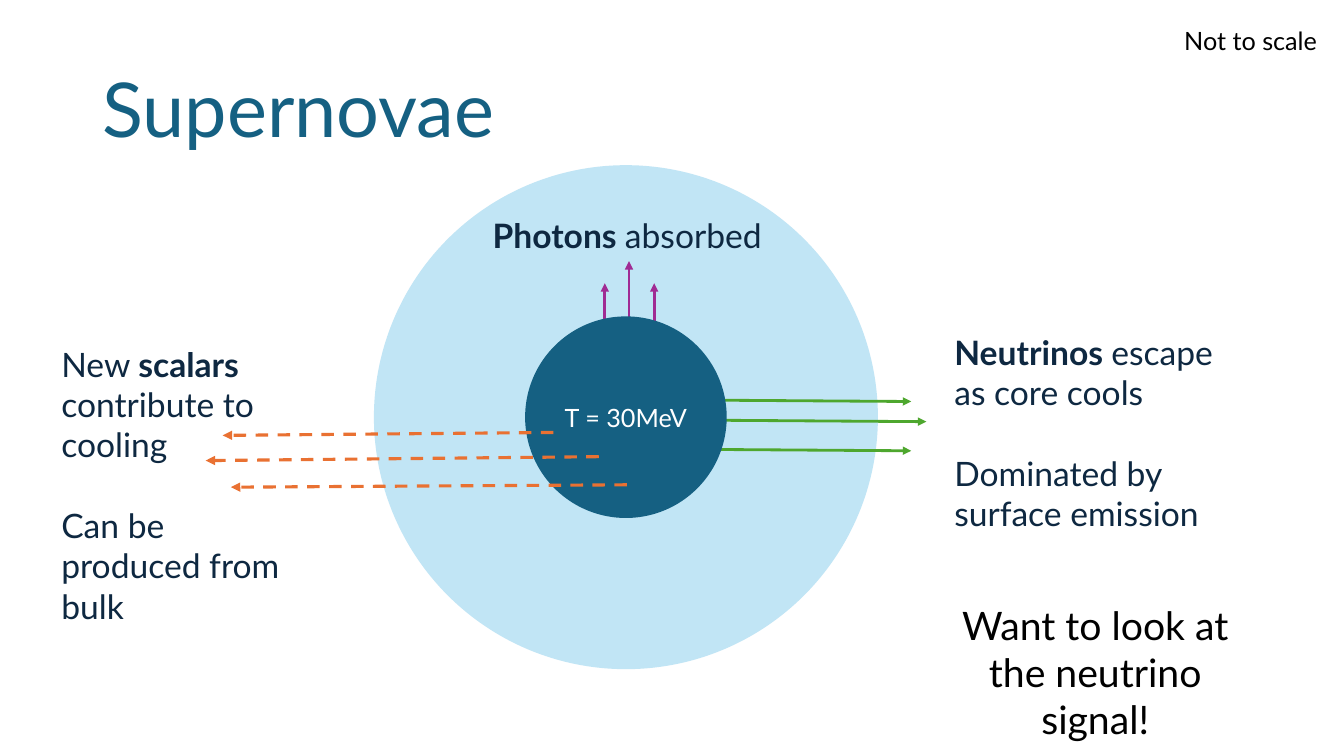
"""Build the slide on particle emission from a supernova core."""
from lxml.etree import SubElement
from pptx import Presentation
from pptx.dml.color import RGBColor
from pptx.enum.dml import MSO_LINE
from pptx.enum.shapes import MSO_CONNECTOR, MSO_SHAPE
from pptx.enum.text import MSO_ANCHOR, MSO_AUTO_SIZE, PP_ALIGN
from pptx.oxml.ns import qn
from pptx.util import Pt

FONT = "Lato"
TEAL, NAVY, BLACK = "156082", "0E2841", "000000"
GREEN, PURPLE, ORANGE = "4EA72E", "A02B93", "E97132"
color = RGBColor.from_string

presentation = Presentation()
presentation.slide_width = Pt(960)
presentation.slide_height = Pt(540)
slide = presentation.slides.add_slide(presentation.slide_layouts[5])


def add_disc(left, top, diameter, fill):
    disc = slide.shapes.add_shape(MSO_SHAPE.OVAL, Pt(left), Pt(top), Pt(diameter), Pt(diameter))
    disc.shadow.inherit = False
    disc.fill.solid()
    disc.fill.fore_color.rgb = color(fill)
    disc.line.fill.background()
    return disc


def add_arrow(ends, stroke, width=2, dash=None):
    arrow = slide.shapes.add_connector(MSO_CONNECTOR.STRAIGHT, *[Pt(value) for value in ends])
    arrow.line.color.rgb = color(stroke)
    arrow.line.width = Pt(width)
    if dash:
        arrow.line.dash_style = dash
    properties = arrow.element.spPr
    SubElement(properties.find(qn("a:ln")), qn("a:tailEnd"), type="triangle")
    SubElement(properties, qn("a:effectLst"))


title = slide.shapes.title
title.left, title.top, title.width, title.height = Pt(66), Pt(28.75), Pt(828), Pt(104.4)
title.text_frame.auto_size = MSO_AUTO_SIZE.NONE
title.text_frame.vertical_anchor = MSO_ANCHOR.MIDDLE
title.text_frame.text = "Supernovae"
paragraph = title.text_frame.paragraphs[0]
paragraph.alignment = PP_ALIGN.LEFT
paragraph.line_spacing = 0.9
paragraph.font.name = FONT
paragraph.font.size = Pt(54)
paragraph.font.color.rgb = color(TEAL)

add_disc(267.1, 118, 360, "C1E5F5")

for x, y in [(503.3, 285.8), (514.1, 300.2), (503.3, 321)]:
    add_arrow((x, y, x + 147.6, y + 1), GREEN)
for x, y in [(432, 245.5), (449.3, 229.7), (467.3, 245.5)]:
    add_arrow((x, y, x, y - 43.2), PURPLE)

core = add_disc(375.1, 226, 144, TEAL)
core.text_frame.word_wrap = True
core.text_frame.vertical_anchor = MSO_ANCHOR.MIDDLE
core.text_frame.text = "T = 30MeV"
paragraph = core.text_frame.paragraphs[0]
paragraph.alignment = PP_ALIGN.CENTER
paragraph.font.name = FONT
paragraph.font.size = Pt(18)
paragraph.font.color.rgb = color("FFFFFF")

for ends in [
    (395.3, 308.9, 159.1, 311),
    (427.7, 326.2, 146.9, 329),
    (447.8, 346.3, 164.9, 348),
]:
    add_arrow(ends, ORANGE, 2.25, MSO_LINE.DASH)

labels = [
    ((344.9, 149.8, 210, 36), 24, NAVY, PP_ALIGN.LEFT,
     [[("Photons ", True), ("absorbed", False)]]),
    ((661, 426.2, 242.6, 75), 28, BLACK, PP_ALIGN.CENTER,
     [[("Want to look at the neutrino signal!", False)]]),
    ((36.7, 241.9, 173.5, 211), 24, NAVY, PP_ALIGN.LEFT,
     [[("New ", False), ("scalars ", True), ("contribute to cooling", False)],
      [("Can be produced from bulk", False)]]),
    ((674.6, 233.3, 219.6, 152.6), 24, NAVY, PP_ALIGN.LEFT,
     [[("Neutrinos ", True), ("escape as core cools", False)],
      [("Dominated by surface emission", False)]]),
    ((838.8, 14.4, 112, 28.8), 18, BLACK, PP_ALIGN.LEFT,
     [[("Not to scale", False)]]),
]
for box, size, ink, alignment, paragraphs in labels:
    label = slide.shapes.add_textbox(*[Pt(value) for value in box])
    frame = label.text_frame
    frame.word_wrap = True
    for index, runs in enumerate(paragraphs):
        paragraph = frame.add_paragraph() if index else frame.paragraphs[0]
        paragraph.alignment = alignment
        paragraph.space_before = Pt(28.8 * index)
        paragraph.font.name = FONT
        paragraph.font.size = Pt(size)
        paragraph.font.color.rgb = color(ink)
        for text, bold in runs:
            run = paragraph.add_run()
            run.text = text
            run.font.bold = bold

presentation.save("out.pptx")
